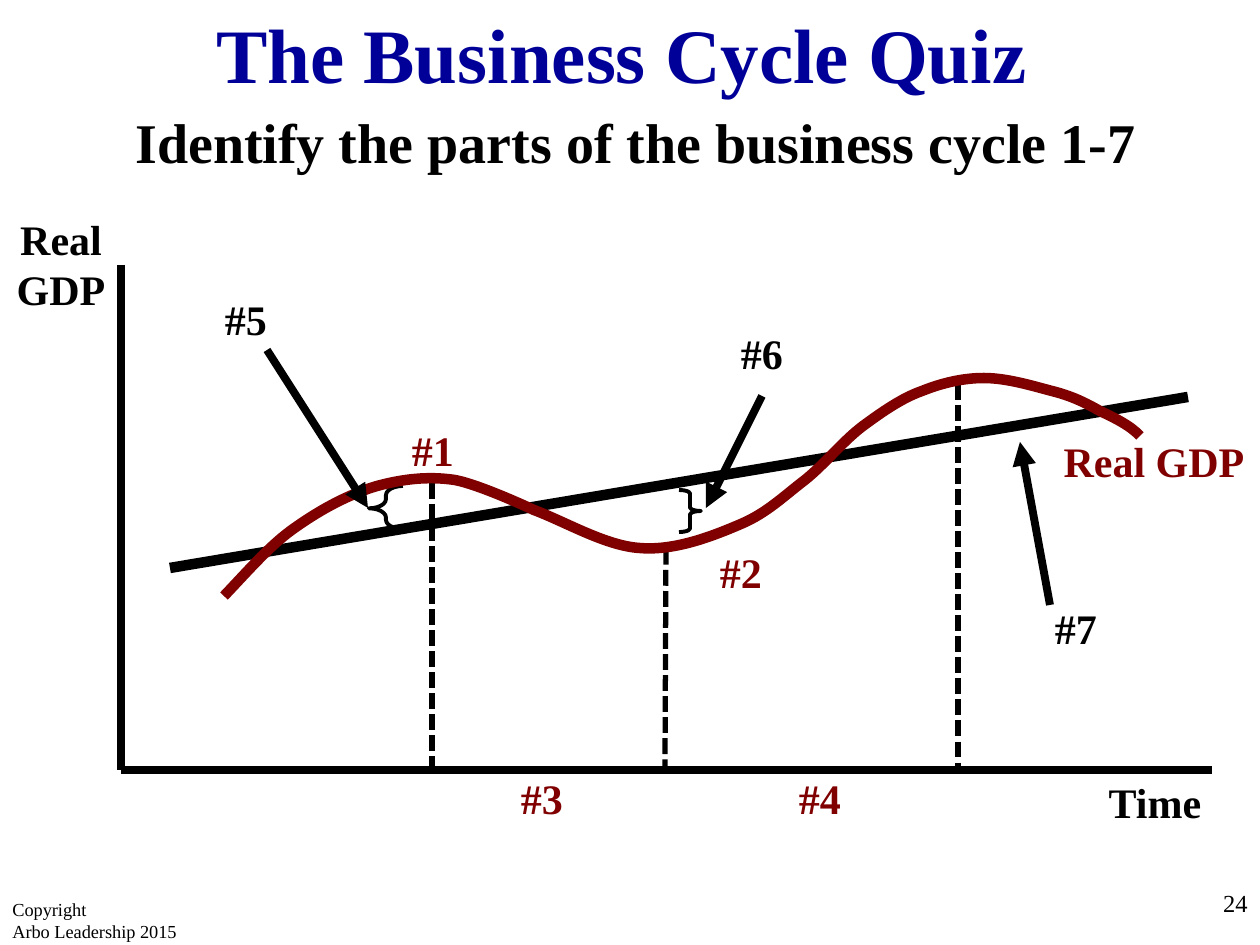
import pptx
import pptx.util
import pptx.dml.color
import pptx.enum.dml
import pptx.enum.shapes
import pptx.enum.text
import pptx.oxml
import pptx.oxml.ns

PX = 914400 // 126
FONT = "Times New Roman"
COLORS = {"black": "000000", "white": "FFFFFF", "maroon": "800000", "navy": "000099"}
ALIGN = pptx.enum.text.PP_ALIGN
SHAPE = pptx.enum.shapes.MSO_SHAPE
qn = pptx.oxml.ns.qn


def add_line(start, end, width, dashed=False, arrow=False):
    c = s.shapes.add_connector(pptx.enum.shapes.MSO_CONNECTOR.STRAIGHT,
                               *[v * PX for v in start + end])
    c.line.width = pptx.util.Pt(width)
    c.line.color.rgb = pptx.dml.color.RGBColor.from_string(COLORS["black"])
    if dashed:
        c.line.dash_style = pptx.enum.dml.MSO_LINE.SQUARE_DOT
    if arrow:
        c.line._get_or_add_ln().append(pptx.oxml.parse_xml(
            '<a:tailEnd xmlns:a="http://schemas.openxmlformats.org/drawingml/2006/main"'
            ' type="triangle"/>'))
    c._element.spPr.append(c._element.makeelement(qn("a:effectLst"), {}))


def add_text(box, lines, size, color, bold=True, align=ALIGN.CENTER, spacing=1.0, fill=None):
    box = [v * PX for v in box]
    if fill:
        sp = s.shapes.add_shape(SHAPE.RECTANGLE, *box)
        sp.shadow.inherit = False
        sp.fill.solid()
        sp.fill.fore_color.rgb = pptx.dml.color.RGBColor.from_string(COLORS[fill])
        sp.line.fill.background()
    else:
        sp = s.shapes.add_textbox(*box)
    tf = sp.text_frame
    tf.word_wrap = True
    tf.vertical_anchor = pptx.enum.text.MSO_ANCHOR.TOP
    for i, line in enumerate(lines):
        p = tf.add_paragraph() if i else tf.paragraphs[0]
        p.alignment = align
        p.line_spacing = spacing
        r = p.add_run()
        r.text = line
        r.font.name = FONT
        r.font.size = pptx.util.Pt(size)
        r.font.bold = bold
        r.font.color.rgb = pptx.dml.color.RGBColor.from_string(COLORS[color])
    return tf


prs = pptx.Presentation()
prs.slide_width = pptx.util.Inches(10)
prs.slide_height = pptx.util.Inches(7.5)
s = prs.slides.add_slide(prs.slide_layouts[6])

# Dashed drops from the turning points to the time axis
AXIS_X, AXIS_Y = 121, 770
for top, bottom_x in [((432, 483), 432), ((666, 549), 665), ((958, 384), 958)]:
    add_line(top, (bottom_x, AXIS_Y), 3, dashed=True)

# Title and instruction
add_text((6, 106, 1260, 77), ["Identify the parts of the business cycle 1-7"], 32, "black",
         spacing=0.95, fill="white")
title = add_text((200, 0, 844, 106), ["The Business Cycle Quiz"], 44, "navy")
title.word_wrap = False

# Output gap braces
for kind, box, adjustments in [
    (SHAPE.RIGHT_BRACE, (679, 490, 22, 42), (0.16, 0.5)),
    (SHAPE.LEFT_BRACE, (369, 486, 34, 43), (0.27, 0.52)),
]:
    sp = s.shapes.add_shape(kind, *[v * PX for v in box])
    sp.shadow.inherit = False
    sp.fill.background()
    sp.line.width = pptx.util.Pt(2.25)
    sp.line.color.rgb = pptx.dml.color.RGBColor.from_string(COLORS["black"])
    for i, value in enumerate(adjustments):
        sp.adjustments[i] = value

# Trend line
add_line((170, 568), (1188, 397), 6)

# Real GDP curve: a start point, then two handles and an end point per segment
curve = [
    (224, 596),
    (248, 571), (271, 544), (296, 527),
    (323, 508), (350, 494), (377, 486),
    (403, 479), (428, 476), (455, 480),
    (481, 485), (534, 510), (534, 510),
    (566, 522), (606, 546), (640, 548),
    (675, 551), (713, 536), (741, 524),
    (767, 513), (784, 496), (805, 480),
    (825, 464), (843, 441), (863, 426),
    (882, 412), (902, 398), (922, 391),
    (942, 383), (963, 378), (984, 378),
    (1007, 378), (1033, 386), (1052, 391),
    (1072, 396), (1086, 403), (1100, 411),
    (1115, 418), (1131, 426), (1140, 436),
]
fb = s.shapes.build_freeform(*curve[0], scale=PX)
fb.add_line_segments(curve[1:], close=False)
sp = fb.convert_to_shape()
sp.shadow.inherit = False
sp.fill.background()
sp.line.width = pptx.util.Pt(6)
sp.line.color.rgb = pptx.dml.color.RGBColor.from_string(COLORS["maroon"])
# Turn every three straight segments into one Bezier segment
segments = list(sp._element.iter(qn("a:lnTo")))
outline = segments[0].getparent()
for i in range(0, len(segments), 3):
    bezier = outline.makeelement(qn("a:cubicBezTo"), {})
    outline.append(bezier)
    for segment in segments[i:i + 3]:
        bezier.append(segment[0])
        outline.remove(segment)

# Axes
add_line((AXIS_X, 265), (AXIS_X, AXIS_Y), 4.5)
add_line((AXIS_X, AXIS_Y), (1212, AXIS_Y), 4.5)

# Pointers for #5, #6 and #7
for start, end in [((267, 350), (368, 508)), ((762, 396), (706, 508)),
                   ((1050, 605), (1020, 442))]:
    add_line(start, end, 4.5, arrow=True)

# Labels
for text, box, color in [
    ("Real GDP", (-26, 207, 174, 115), "black"),
    ("Time", (1050, 770, 210, 64), "black"),
    ("#5", (141, 287, 210, 64), "black"),
    ("#6", (607, 321, 310, 64), "black"),
    ("#7", (921, 596, 310, 64), "black"),
    ("#1", (328, 418, 210, 64), "maroon"),
    ("#2", (636, 540, 210, 64), "maroon"),
    ("Real GDP", (999, 429, 310, 64), "maroon"),
]:
    add_text(box, [text], 24, color)
for text, left in [("#3", 387), ("#4", 665)]:
    add_text((left, 772, 310, 59), [text], 24, "maroon", spacing=0.9)

# Footer
add_text((998, 882, 262, 63), ["24"], 14, "black", bold=False, align=ALIGN.RIGHT)
add_text((0, 892, 210, 63), ["Copyright", "Arbo Leadership 2015"], 10.5, "black",
         bold=False, align=ALIGN.LEFT)

prs.save("out.pptx")
